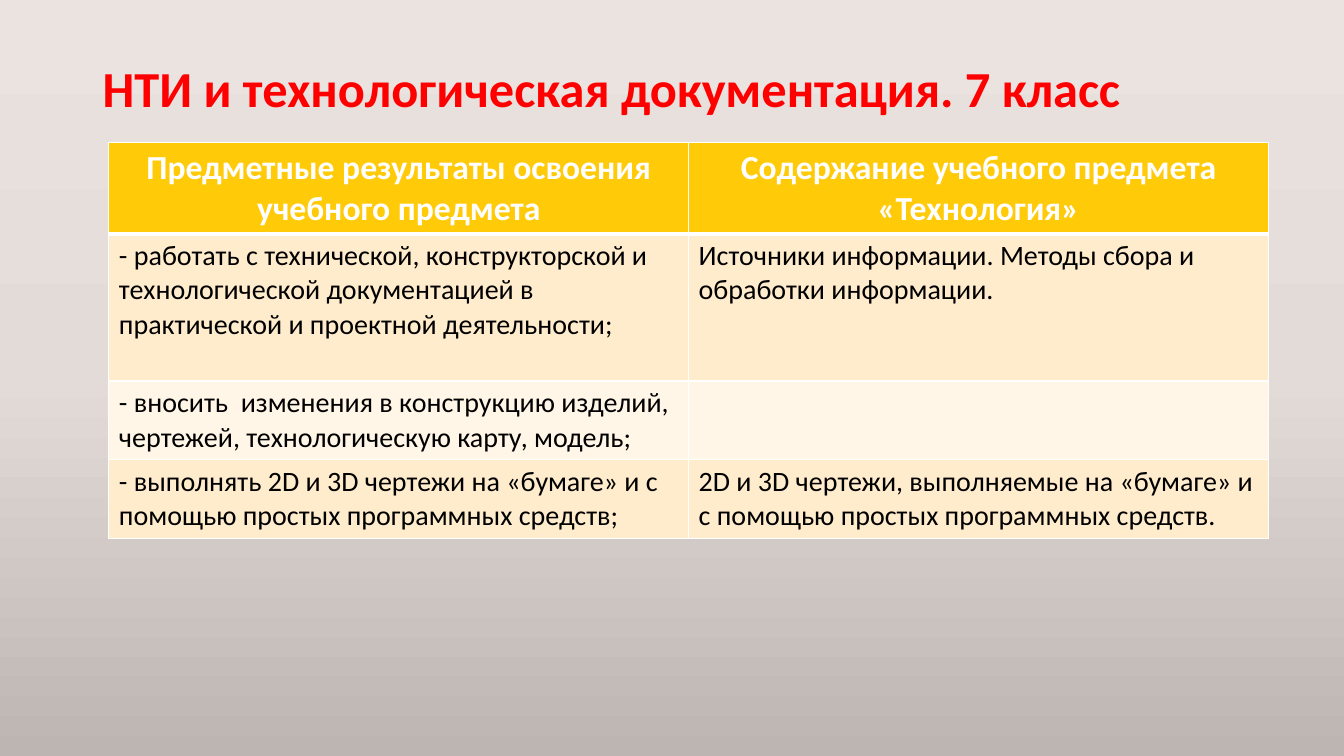
from copy import deepcopy

from lxml import etree
from pptx import Presentation
from pptx.dml.color import RGBColor
from pptx.enum.text import MSO_ANCHOR as Anchor, PP_ALIGN as Align
from pptx.oxml.ns import qn
from pptx.util import Inches, Pt

COLORS = {
    "title": "FF0000", "white": "FFFFFF", "text": "000000",
    "header": "FFCA08", "odd": "FFECCC", "even": "FFF6E7",
    "sky": "EBE3DF", "middle": "E2DBD8", "ground": "BCB5B2",
}


def write(frame, text, size=20, color="text", bold=False, align=Align.LEFT, spacing=1.0):
    paragraph = frame.paragraphs[0]
    paragraph.alignment = align
    paragraph.line_spacing = spacing
    run = paragraph.add_run()
    run.text = text
    run.font.name = "Calibri"
    run.font.size = Pt(size)
    run.font.bold = bold
    run.font.color.rgb = RGBColor.from_string(COLORS[color])


def add_borders(cell, bottom=1, top=1):
    properties = cell._tc.get_or_add_tcPr()
    widths = {"a:lnL": 1, "a:lnR": 1, "a:lnT": top, "a:lnB": bottom}
    for index, (side, width) in enumerate(widths.items()):
        line = etree.Element(qn(side), w=str(Pt(width)))
        fill = etree.SubElement(line, qn("a:solidFill"))
        etree.SubElement(fill, qn("a:srgbClr"), val=COLORS["white"])
        properties.insert(index, line)


prs = Presentation()
prs.slide_width, prs.slide_height = Inches(13.33), Inches(7.5)
slide = prs.slides.add_slide(prs.slide_layouts[6])

# Background gradient, light at the top
backdrop = slide.background.fill
backdrop.gradient()
backdrop.gradient_angle = 270
stop_list = slide.element.find(".//" + qn("a:gsLst"))
stop_list.insert(1, deepcopy(stop_list[0]))
for stop, position, color in zip(backdrop.gradient_stops, (0, 0.5, 1), ("sky", "middle", "ground")):
    stop.position = position
    stop.color.rgb = RGBColor.from_string(COLORS[color])

# Title
title = slide.shapes.add_textbox(Inches(0.92), Inches(0.4), Inches(11.5), Inches(1.01)).text_frame
title.word_wrap = True
title.vertical_anchor = Anchor.MIDDLE
write(title, "НТИ и технологическая документация. 7 класс",
      size=36, color="title", bold=True, spacing=0.9)

# Results and content table
ROWS = [
    ("Предметные результаты освоения учебного предмета",
     "Содержание учебного предмета «Технология»"),
    ("- работать с технической, конструкторской и технологической документацией "
     "в практической и проектной деятельности;",
     "Источники информации. Методы сбора и обработки информации."),
    ("- вносить  изменения в конструкцию изделий, чертежей, технологическую карту, модель;", ""),
    ("- выполнять 2D и 3D чертежи на «бумаге» и с помощью простых программных средств;",
     "2D и 3D чертежи, выполняемые на «бумаге» и с помощью простых программных средств."),
]
HEIGHTS = (0.91, 1.46, 0.78, 0.78)
results = slide.shapes.add_table(len(ROWS), 2, Inches(1.08), Inches(1.41),
                                 Inches(11.5), Inches(sum(HEIGHTS))).table
for r, (texts, height) in enumerate(zip(ROWS, HEIGHTS)):
    results.rows[r].height = Inches(height)
    band = "header" if r == 0 else "odd" if r % 2 else "even"
    for c, text in enumerate(texts):
        cell = results.cell(r, c)
        add_borders(cell, bottom=3 if r == 0 else 1, top=3 if r == 1 else 1)
        cell.fill.solid()
        cell.fill.fore_color.rgb = RGBColor.from_string(COLORS[band])
        if r == 0:
            write(cell.text_frame, text, size=24, color="white", bold=True, align=Align.CENTER)
        elif text:
            write(cell.text_frame, text)

prs.save("out.pptx")
